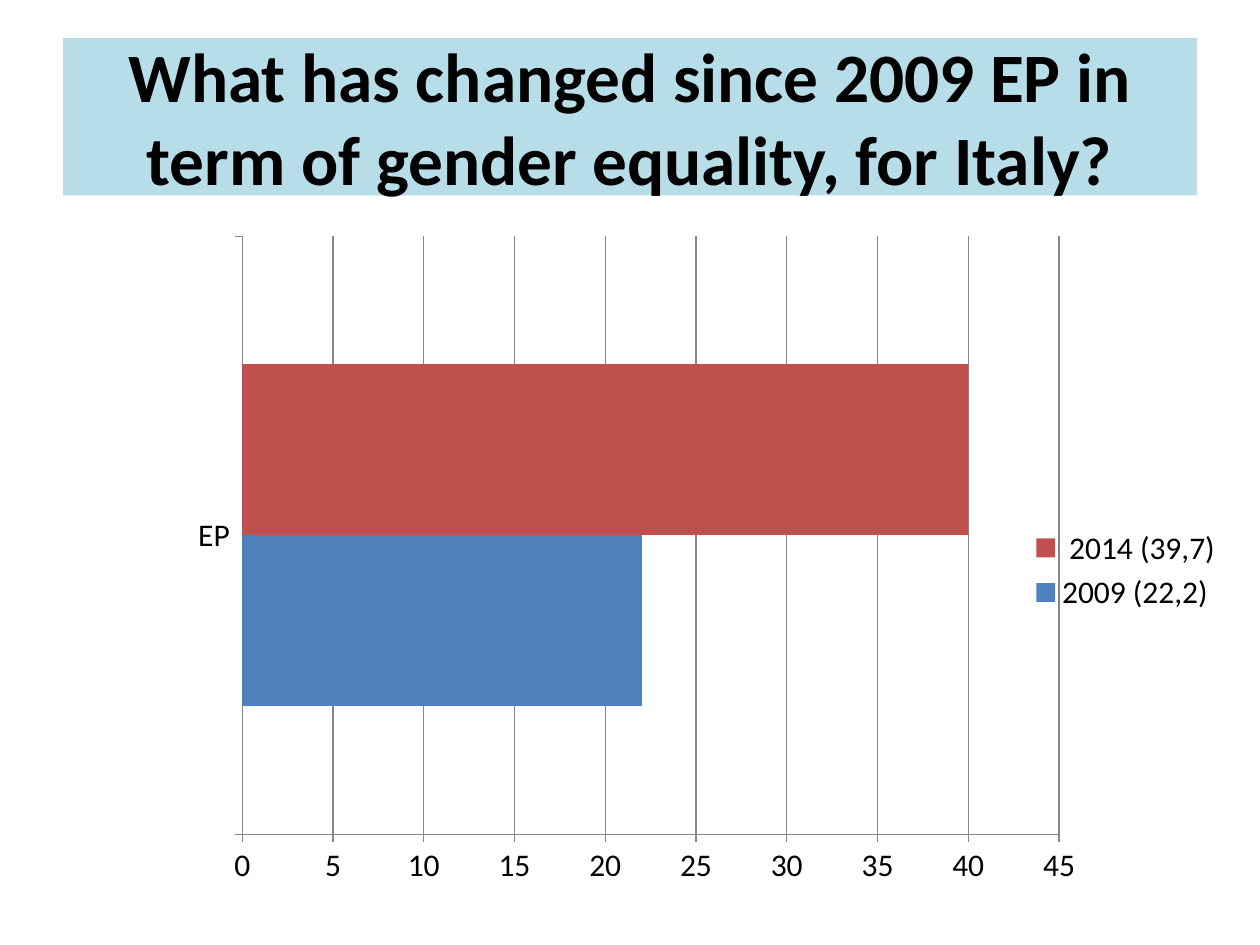
from lxml import etree
from pptx import Presentation
from pptx.chart.data import CategoryChartData
from pptx.dml.color import RGBColor
from pptx.enum import chart as ch, text
from pptx.oxml import ns
from pptx.util import Pt

# Content
TITLE = "What has changed since 2009 EP in term of gender equality, for Italy?"
CATS = ["EP"]
SERIES = [("2009 (22,2)", 22, "blue"), (" 2014 (39,7)", 40, "red")]

# Places in points; chart parts in percent of the chart
SIZE = (720, 540)
HEAD = (36, 21.6, 648, 90)
CHART = (25.5, 126.2, 680.4, 398.9)
PLOT = {"x": 16.6, "y": 2.2, "w": 68.6, "h": 85.7}
KEY = {"x": 82.3, "y": 43.2, "w": 17, "h": 13.7}


class Theme:
    font = "Calibri"
    head = 39.6
    body = 18
    color = {name: RGBColor.from_string(code) for name, code in {
        "ink": "000000", "band": "B7DEE8", "line": "868686",
        "blue": "4F81BD", "red": "C0504D"}.items()}


def style(font, size, bold=False):
    font.name, font.size, font.bold = Theme.font, Pt(size), bold
    font.color.rgb = Theme.color["ink"]


def rule(line):
    line.color.rgb = Theme.color["line"]
    line.width = Pt(0.75)


def layout(part, box, inner=False):
    """Build a manual layout element for a chart part."""
    for old in part.findall(ns.qn("c:layout")):
        part.remove(old)
    lay = etree.Element(ns.qn("c:layout"))
    man = etree.SubElement(lay, ns.qn("c:manualLayout"))
    items = [("layoutTarget", "inner")] if inner else []
    items += [("xMode", "edge"), ("yMode", "edge")]
    items += [(tag, round(val / 100, 3)) for tag, val in box.items()]
    for tag, val in items:
        etree.SubElement(man, ns.qn("c:" + tag)).set("val", str(val))
    return lay


def add_head(slide):
    head = slide.shapes.title
    head.left, head.top, head.width, head.height = map(Pt, HEAD)
    head.fill.solid()
    head.fill.fore_color.rgb = Theme.color["band"]
    frame = head.text_frame
    frame.word_wrap = True
    frame.auto_size = text.MSO_AUTO_SIZE.NONE
    frame.vertical_anchor = text.MSO_ANCHOR.MIDDLE
    para = frame.paragraphs[0]
    para.alignment = text.PP_ALIGN.CENTER
    run = para.add_run()
    run.text = TITLE
    style(run.font, Theme.head, True)


def add_bars(slide):
    data = CategoryChartData()
    data.categories = CATS
    for name, val, _ in SERIES:
        data.add_series(name, [val])
    chart = slide.shapes.add_chart(
        ch.XL_CHART_TYPE.BAR_CLUSTERED, *map(Pt, CHART), data).chart
    chart.has_title = False
    style(chart.font, Theme.body)

    # Bars
    plot = chart.plots[0]
    plot.gap_width, plot.overlap = 150, 0
    plot.vary_by_categories = False
    for bar, (_, _, hue) in zip(plot.series, SERIES):
        bar.format.fill.solid()
        bar.format.fill.fore_color.rgb = Theme.color[hue]

    # Axes
    for axis in (chart.category_axis, chart.value_axis):
        axis.major_tick_mark = ch.XL_TICK_MARK.OUTSIDE
        axis.minor_tick_mark = ch.XL_TICK_MARK.NONE
        rule(axis.format.line)
    val = chart.value_axis
    val.minimum_scale, val.maximum_scale, val.major_unit = 0, 45, 5
    val.has_major_gridlines = True
    rule(val.major_gridlines.format.line)

    # Legend and plot area
    chart.has_legend = True
    key = chart.legend
    key.position = ch.XL_LEGEND_POSITION.RIGHT
    key.include_in_layout = False
    root = chart.element
    area = root.find(".//" + ns.qn("c:plotArea"))
    area.insert(0, layout(area, PLOT, True))
    part = root.find(".//" + ns.qn("c:legend"))
    lay = layout(part, KEY)
    part.find(ns.qn("c:legendPos")).addnext(lay)


def main():
    deck = Presentation()
    deck.slide_width, deck.slide_height = map(Pt, SIZE)
    slide = deck.slides.add_slide(deck.slide_layouts[5])
    add_head(slide)
    add_bars(slide)
    deck.save("out.pptx")


if __name__ == "__main__":
    main()
